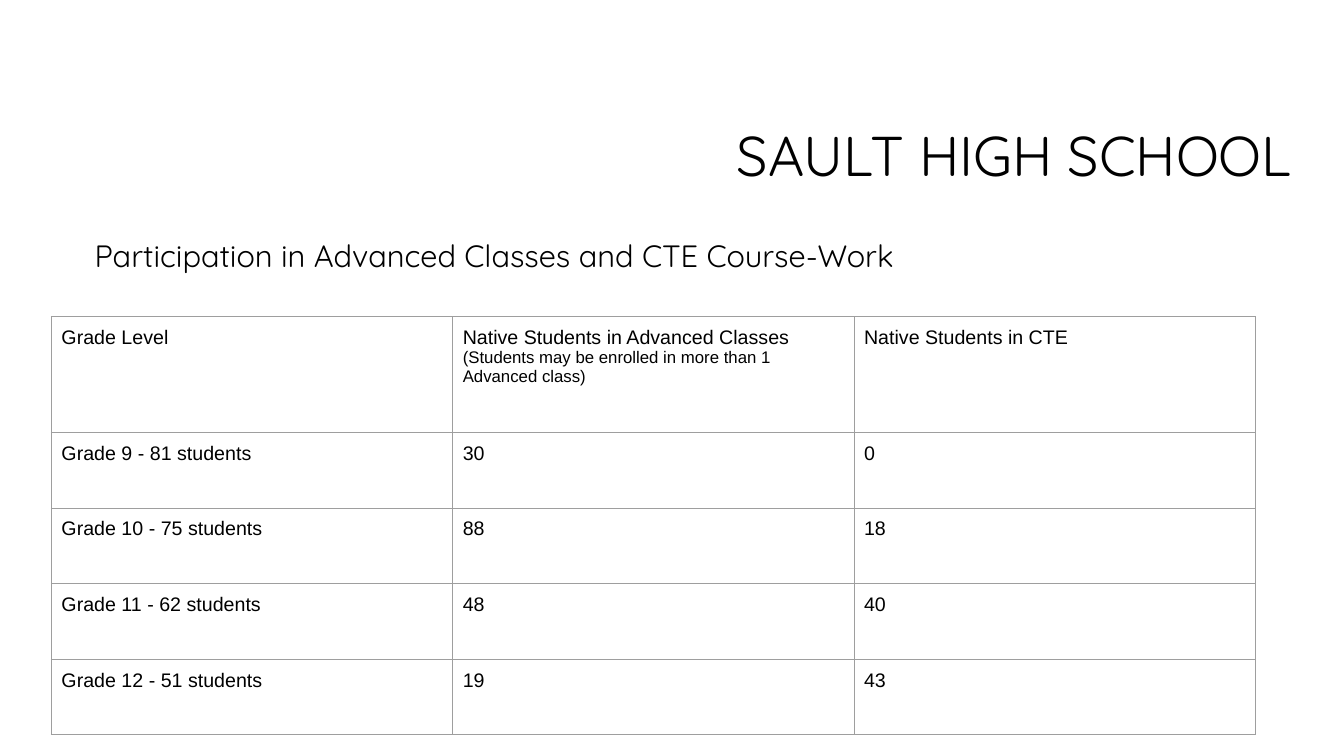
"""Build the Sault High School participation slide."""
from lxml import etree
from pptx import Presentation
from pptx import util as u
from pptx.dml.color import RGBColor
from pptx.enum import text
from pptx.oxml.ns import qn

BLACK = RGBColor(0x00, 0x00, 0x00)
GREY = RGBColor(0x9E, 0x9E, 0x9E)
WIDTH, HEIGHT = 13.33, 7.5

HEADINGS = [
    ("SAULT HIGH SCHOOL", 40, (3.49, 0.87, 9.42, 1.41),
     text.PP_ALIGN.RIGHT, text.MSO_ANCHOR.MIDDLE),
    ("Participation in Advanced Classes and CTE Course-Work", 22,
     (0.84, 2.34, 11.83, 0.8), text.PP_ALIGN.LEFT, text.MSO_ANCHOR.TOP),
]
HEADER = [
    [("Grade Level", 14)],
    [("Native Students in Advanced Classes", 14),
     ("(Students may be enrolled in more than 1 Advanced class)", 12)],
    [("Native Students in CTE", 14)],
]
GRADES = [(9, 81, 30, 0), (10, 75, 88, 18), (11, 62, 48, 40), (12, 51, 19, 43)]
TABLE_LEFT, TABLE_TOP, COLUMN = 0.51, 3.14, 3.98
HEADER_ROW, GRADE_ROW = 1.15, 0.75


def add_run(p, words, size, font):
    r = p.add_run()
    r.text = words
    r.font.size, r.font.name = u.Pt(size), font
    r.font.color.rgb = BLACK


def add_heading(s, words, size, box, align, anchor):
    tf = s.shapes.add_textbox(*map(u.Inches, box)).text_frame
    tf.word_wrap, tf.vertical_anchor = True, anchor
    p = tf.paragraphs[0]
    p.alignment, p.line_spacing = align, 0.9
    add_run(p, words, size, "Quicksand")


def style_cell(cell):
    cell.margin_left = cell.margin_right = u.Inches(0.1)
    cell.margin_top = cell.margin_bottom = u.Inches(0.1)
    props = cell._tc.get_or_add_tcPr()
    for side in ("a:lnL", "a:lnR", "a:lnT", "a:lnB"):
        line = etree.SubElement(props, qn(side), w=str(u.Pt(0.75)))
        fill = etree.SubElement(line, qn("a:solidFill"))
        etree.SubElement(fill, qn("a:srgbClr"), val=str(GREY))
    cell.fill.background()


def add_grades(s):
    rows = [HEADER] + [
        [[(f"Grade {grade} - {students} students", 14)],
         [(str(advanced), 14)], [(str(cte), 14)]]
        for grade, students, advanced, cte in GRADES]
    heights = [HEADER_ROW] + [GRADE_ROW] * len(GRADES)
    frame = (TABLE_LEFT, TABLE_TOP, COLUMN * len(HEADER), sum(heights))
    table = s.shapes.add_table(
        len(rows), len(HEADER), *map(u.Inches, frame)).table
    table.first_row = table.horz_banding = False
    for column in table.columns:
        column.width = u.Inches(COLUMN)
    for i, (row, height) in enumerate(zip(rows, heights)):
        table.rows[i].height = u.Inches(height)
        for j, lines in enumerate(row):
            cell = table.cell(i, j)
            style_cell(cell)
            tf = cell.text_frame
            for k, (words, size) in enumerate(lines):
                p = tf.add_paragraph() if k else tf.paragraphs[0]
                add_run(p, words, size, "Arial")


def main():
    prs = Presentation()
    prs.slide_width, prs.slide_height = u.Inches(WIDTH), u.Inches(HEIGHT)
    s = prs.slides.add_slide(prs.slide_layouts[6])
    for heading in HEADINGS:
        add_heading(s, *heading)
    add_grades(s)
    prs.save("out.pptx")


if __name__ == "__main__":
    main()
